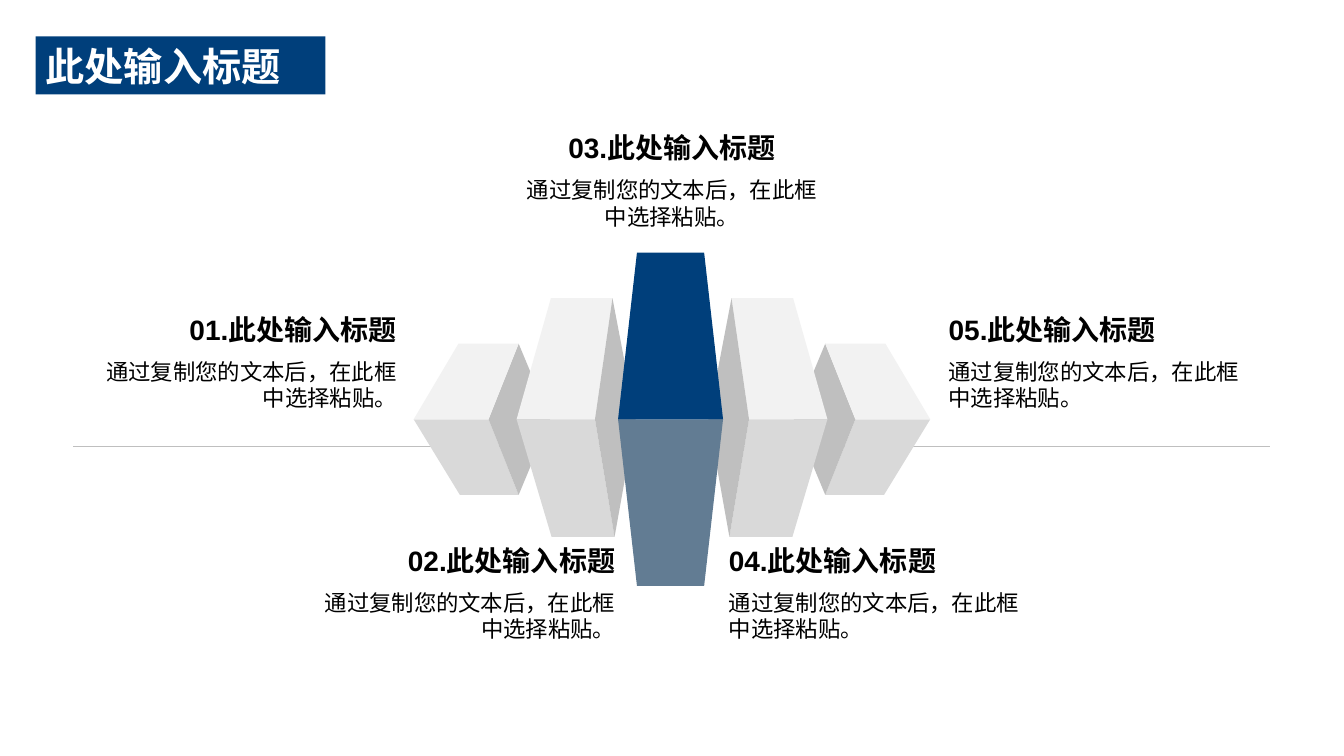
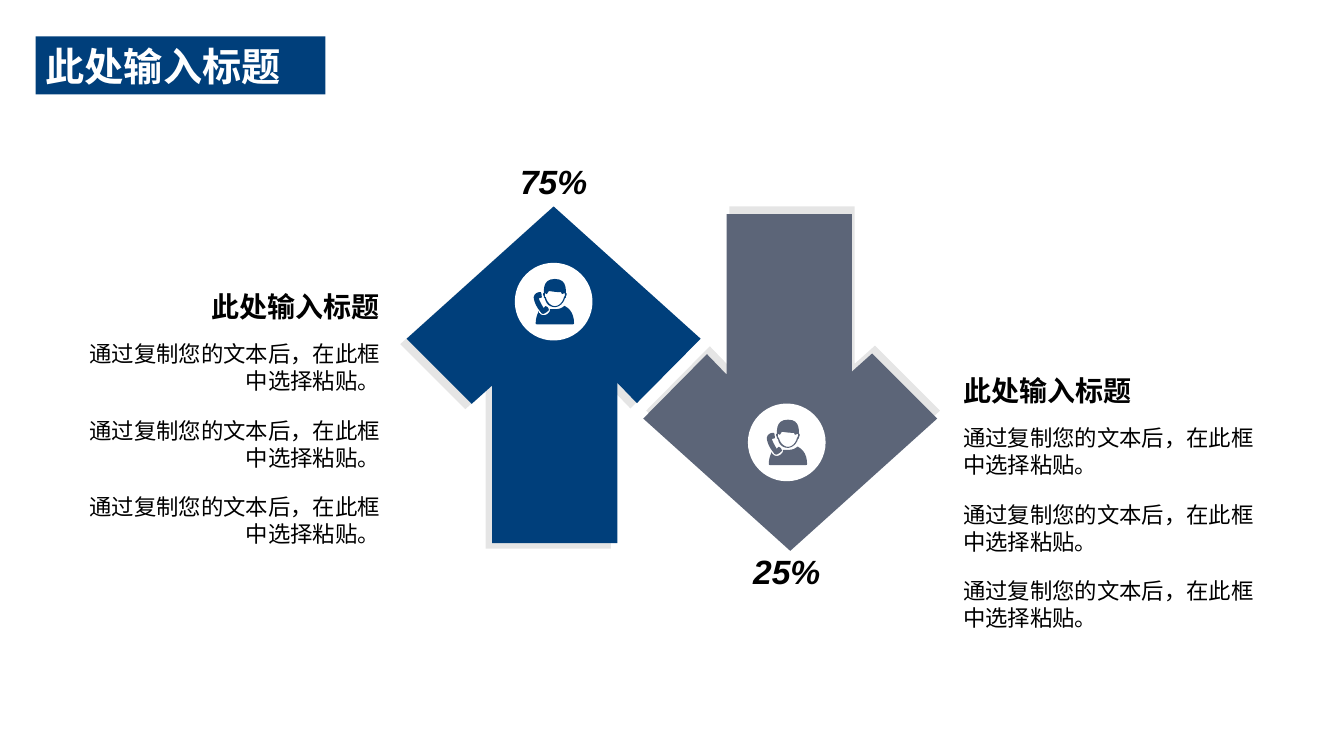
from lxml.etree import SubElement
from pptx import Presentation
from pptx.dml.color import RGBColor
from pptx.enum.shapes import MSO_CONNECTOR, MSO_SHAPE
from pptx.enum.text import MSO_ANCHOR as ANCHOR, PP_ALIGN as ALIGN
from pptx.oxml.ns import qn
from pptx.util import Pt

NAVY, SLATE, STEEL = "003F7B", "5C6578", "627C93"
LIGHT, MID, DARK = "F2F2F2", "D9D9D9", "BFBFBF"
WHITE, BLACK = "FFFFFF", "000000"

TITLE = "此处输入标题"
BODY = "通过复制您的文本后，在此框中选择粘贴。"

TITLE_FMT = {"size": Pt(28), "bold": True}
HEAD_FMT = {"size": Pt(20), "bold": True}
BODY_FMT = {"size": Pt(16)}
RATE_FMT = {"size": Pt(24), "bold": True, "italic": True}

ARROW = [(0, 0), (105, 94.5), (59.5, 140.5), (45.5, 126), (45.5, 240.5),
         (-44, 240.5), (-44, 128), (-58.5, 141), (-105, 94.5)]

HEAD = [(10, 17), (10, 18, 10, 19, 11, 19), (12, 25, 16, 28, 21, 28),
        (25, 28, 30, 24, 31, 19), (32, 19, 32, 18, 32, 17),
        (33, 16, 33, 14, 32, 14), (32, 7, 31, 0, 21, 0),
        (11, 0, 10, 7, 10, 14), (9, 14, 9, 16, 10, 17)]
FACE = [(31, 16), (31, 17, 30, 18, 30, 18), (29, 23, 25, 27, 21, 27),
        (17, 27, 13, 23, 12, 18), (11, 18, 11, 17, 11, 16), (11, 14),
        (13, 15), (15, 12), (16, 12, 21, 13, 24, 13),
        (26, 13, 27, 13, 27, 13), (28, 15), (31, 14)]
TORSO = [(40, 44), (40, 45, 39, 45, 39, 45), (3, 45), (3, 45, 2, 45, 2, 44),
         (2, 40, 3, 36, 5, 32), (5, 33, 5, 34, 6, 34), (6, 34, 7, 36, 10, 36),
         (12, 36, 14, 35, 16, 32), (16, 31, 16, 30, 16, 30),
         (18, 30, 19, 30, 21, 30), (25, 30, 28, 29, 30, 27),
         (31, 27, 31, 26, 31, 27), (37, 30, 40, 36, 40, 44)]
PHONE = [(7, 33), (0, 25, 0, 18, 0, 18), (1, 13, 6, 13, 7, 13),
         (8, 14, 8, 18, 8, 18), (8, 19, 5, 19, 5, 19), (6, 23, 10, 29, 10, 29),
         (11, 27, 12, 27, 12, 27), (15, 28, 15, 31, 15, 31),
         (10, 36, 8, 35, 7, 33)]


def rgb(value):
    return RGBColor.from_string(value)


def flatten(outline, steps=6):
    pts = [outline[0]]
    for seg in outline[1:]:
        if len(seg) == 2:
            pts.append(seg)
            continue
        (x0, y0), (x1, y1, x2, y2, x3, y3) = pts[-1], seg
        for i in range(1, steps + 1):
            t = i / steps
            a, b, c, d = (1 - t) ** 3, 3 * t * (1 - t) ** 2, 3 * t * t * (1 - t), t ** 3
            pts.append((a * x0 + b * x1 + c * x2 + d * x3,
                        a * y0 + b * y1 + c * y2 + d * y3))
    return pts


class Deck:
    font = "Arial"
    units = 100

    def __init__(self):
        self.prs = Presentation()
        self.prs.slide_width, self.prs.slide_height = Pt(960), Pt(540)

    def new_slide(self, title):
        self.s = self.prs.slides.add_slide(self.prs.slide_layouts[6])
        sp = self.shape(MSO_SHAPE.RECTANGLE, 25.5, 26, 207, 41.5, NAVY)
        self.set_text(sp, title, TITLE_FMT, color=WHITE, anchor=ANCHOR.MIDDLE)

    def paint(self, sp, fill):
        sp.shadow.inherit = False
        sp.fill.solid()
        sp.fill.fore_color.rgb = rgb(fill)
        sp.line.fill.background()
        return sp

    def shape(self, kind, x, y, w, h, fill):
        return self.paint(self.s.shapes.add_shape(kind, Pt(x), Pt(y), Pt(w), Pt(h)), fill)

    def set_text(self, sp, text, fmt, color=BLACK, align=ALIGN.LEFT, anchor=ANCHOR.TOP):
        tf = sp.text_frame
        tf.word_wrap, tf.vertical_anchor = True, anchor
        p = tf.paragraphs[0]
        p.alignment = align
        r = p.add_run()
        r.text = text
        for key, value in {"name": self.font, **fmt}.items():
            setattr(r.font, key, value)
        r.font.color.rgb = rgb(color)
        SubElement(r._r.get_or_add_rPr(), qn("a:ea"), typeface=self.font)

    def text(self, x, y, w, h, text, fmt, **layout):
        sp = self.s.shapes.add_textbox(Pt(x), Pt(y), Pt(w), Pt(h))
        self.set_text(sp, text, fmt, **layout)

    def line(self, x1, y1, x2, y2, color, width):
        cx = self.s.shapes.add_connector(MSO_CONNECTOR.STRAIGHT, Pt(x1), Pt(y1), Pt(x2), Pt(y2))
        cx.line.color.rgb, cx.line.width = rgb(color), Pt(width)
        SubElement(cx._element.spPr, qn("a:effectLst"))

    def outline(self, contours, x, y, fill, sx=1, sy=1):
        n = self.units
        placed = [[((x + sx * px) * n, (y + sy * py) * n) for px, py in c] for c in contours]
        fb = self.s.shapes.build_freeform(*placed[0][0], scale=Pt(1) / n)
        for i, pts in enumerate(placed):
            if i:
                fb.move_to(*pts[0])
            fb.add_line_segments(pts[1:], close=True)
        return self.paint(fb.convert_to_shape(), fill)

    def cast_shadow(self, sp, dist, angle):
        fx = sp._element.spPr.find(qn("a:effectLst"))
        shadow = SubElement(fx, qn("a:outerShdw"), blurRad="0", dist=str(int(Pt(dist))),
                            dir=str(angle * 60000), algn="ctr", rotWithShape="0")
        color = SubElement(shadow, qn("a:srgbClr"), val=BLACK)
        SubElement(color, qn("a:alpha"), val="10000")

    def block(self, x, y, w, head, align, head_h, body_h, body_dy, count=1, pitch=0):
        self.text(x, y, w, head_h, head, HEAD_FMT, align=align, anchor=ANCHOR.MIDDLE)
        for i in range(count):
            self.text(x, y + body_dy + i * pitch, w, body_h, BODY, BODY_FMT, align=align)

    def wing(self, cx, cy, side):
        faces = [
            ([(131, 0), (184.5, 0), (151.5, 54), (109.5, 54)], MID),
            ([(87, 0), (109.5, -54), (131, 0), (109.5, 54)], DARK),
            ([(131, 0), (109.5, -54), (152.5, -54), (184.5, 0)], LIGHT),
            ([(42.5, -86.5), (86.5, -86.5), (111, 0), (55, 0)], LIGHT),
            ([(41, 84), (55, 0), (111, 0), (86, 84)], MID),
            ([(55, 0), (41, 84), (26, 0), (42.5, -86.5)], DARK),
        ]
        for pts, fill in faces:
            self.outline([pts], cx, cy, fill, sx=side)

    def arrow(self, tip, sign, badge, rate, rate_y, fill, angle):
        sp = self.outline([ARROW], *tip, fill, sx=sign, sy=sign)
        self.cast_shadow(sp, 6, angle)
        cx, cy = badge
        size = 55.5
        x, y = cx - size / 2, cy - size / 2
        self.shape(MSO_SHAPE.OVAL, x, y, size, size, WHITE)
        person = [flatten(c) for c in (HEAD, FACE, TORSO, PHONE)]
        self.outline(person, x + 13.5, y + 11.5, fill, sx=0.72, sy=0.72)
        self.text(cx - 60, rate_y, 120, 39.5, rate, RATE_FMT,
                  align=ALIGN.CENTER, anchor=ANCHOR.BOTTOM)


def blocks_slide(d):
    d.new_slide(TITLE)
    d.line(52.5, 319, 907, 319, DARK, 0.25)
    for side in (1, -1):
        d.wing(480, 299.5, side)
    for sy, fill in ((1, STEEL), (-1, NAVY)):
        d.outline([[(-37.5, 0), (37.5, 0), (24, 119), (-24, 119)]], 479, 299.5, fill, sy=sy)
    spots = [(53.5, 218, ALIGN.RIGHT), (209.5, 383, ALIGN.RIGHT), (361.5, 88.5, ALIGN.CENTER),
             (513.5, 383, ALIGN.LEFT), (670.5, 218, ALIGN.LEFT)]
    for i, (x, y, align) in enumerate(spots, 1):
        d.block(x, y, 237, f"{i:02}.{TITLE}", align, 34, 47.5, 34)


def arrows_slide(d):
    d.new_slide(TITLE)
    for x, y, align in ((52.5, 199.5, ALIGN.RIGHT), (681, 259.5, ALIGN.LEFT)):
        d.block(x, y, 226, TITLE, align, 38, 56, 40, count=3, pitch=54.7)
    d.arrow((395.5, 147.5), 1, (395.5, 215.5), "75%", 108, NAVY, 140)
    d.arrow((564.5, 393.5), -1, (562, 316), "25%", 386.5, SLATE, 290)


def main():
    d = Deck()
    blocks_slide(d)
    arrows_slide(d)
    d.prs.save("out.pptx")


if __name__ == "__main__":
    main()
